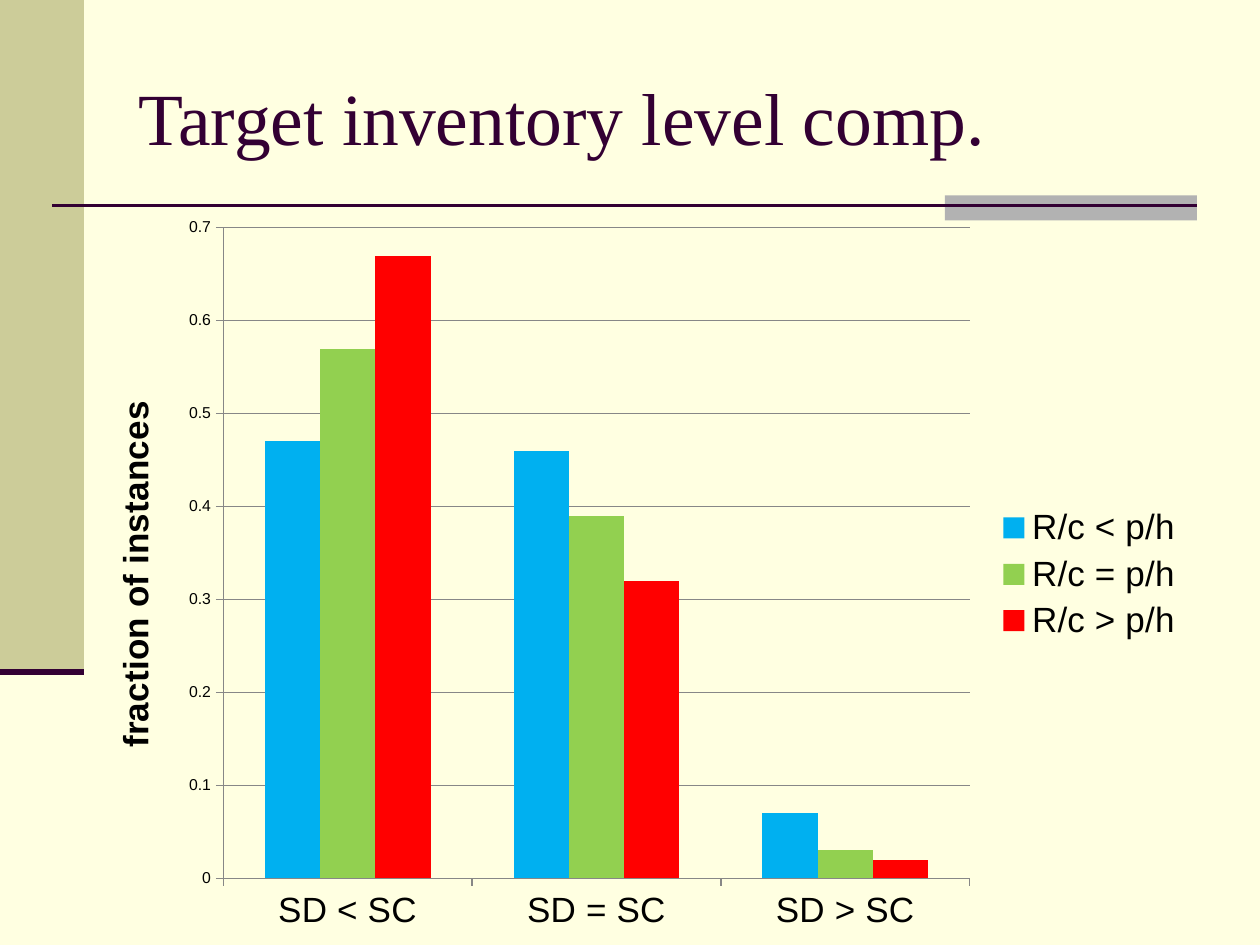
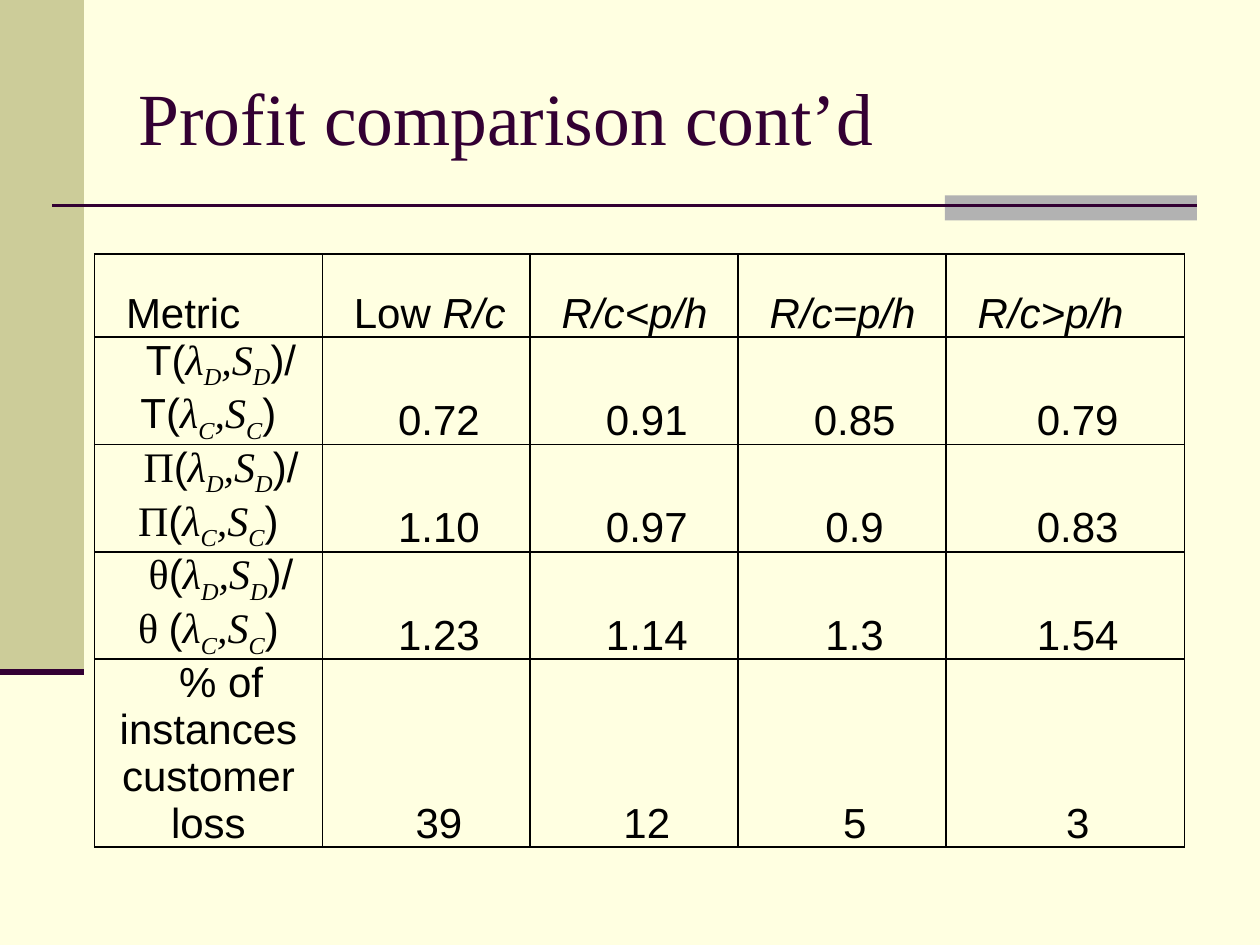
import pptx
import pptx.chart.data
import pptx.dml.color
import pptx.enum.chart
import pptx.enum.shapes
import pptx.enum.text
import pptx.oxml
import pptx.oxml.ns
import pptx.util
from lxml import etree

RGBColor = pptx.dml.color.RGBColor
CREAM = RGBColor(0xFF, 0xFF, 0xE1)
KHAKI = RGBColor(0xCC, 0xCC, 0x99)
SILVER = RGBColor(0xB2, 0xB2, 0xB2)
PLUM = RGBColor(0x33, 0x00, 0x33)
BLACK = RGBColor(0x00, 0x00, 0x00)
GRAY = RGBColor(0x87, 0x87, 0x87)
BLUE = RGBColor(0x00, 0xB0, 0xF0)
GREEN = RGBColor(0x92, 0xD0, 0x50)
RED = RGBColor(0xFF, 0x00, 0x00)

SANS = "Arial"
SERIF = "Times New Roman"
COLUMNS, ROWS = 120, 90
SUBSCRIPT = -25000


class Deck:
    def __init__(self):
        self.presentation = pptx.Presentation()
        self.presentation.slide_width = pptx.util.Inches(10)
        self.presentation.slide_height = pptx.util.Inches(7.5)
        self.set_fill(self.presentation.slide_master.background.fill, CREAM)
        self.slide = None

    def across(self, columns):
        return round(self.presentation.slide_width * columns / COLUMNS)

    def down(self, rows):
        return round(self.presentation.slide_height * rows / ROWS)

    def area(self, left, top, width, height):
        return self.across(left), self.down(top), self.across(width), self.down(height)

    def set_fill(self, fill, color):
        fill.solid()
        fill.fore_color.rgb = color

    def set_font(self, font, size, color=BLACK, name=SANS, bold=False, italic=False):
        font.size = pptx.util.Pt(size)
        font.color.rgb = color
        font.name = name
        font.bold = bold
        font.italic = italic

    def set_line(self, line, color, width):
        line.color.rgb = color
        line.width = pptx.util.Pt(width)

    def start_slide(self, title):
        layout = self.presentation.slide_layouts.get_by_name("Title Only")
        self.slide = self.presentation.slides.add_slide(layout)
        self.block(KHAKI, 0, 0, 8, 64)
        self.block(SILVER, 90, 18.6, 24, 2.4)
        self.rule(5, 114, 19.6, 1.5)
        self.rule(0, 8, 64, 3.5)
        self.title(title)

    def block(self, color, *place):
        shape = self.slide.shapes.add_shape(
            pptx.enum.shapes.MSO_SHAPE.RECTANGLE, *self.area(*place))
        shape.shadow.inherit = False
        self.set_fill(shape.fill, color)
        shape.line.fill.background()

    def rule(self, start, end, row, width):
        connector = self.slide.shapes.add_connector(
            pptx.enum.shapes.MSO_CONNECTOR.STRAIGHT,
            self.across(start), self.down(row), self.across(end), self.down(row))
        self.set_line(connector.line, PLUM, width)
        etree.SubElement(connector._element.spPr, pptx.oxml.ns.qn("a:effectLst"))

    def title(self, text):
        shape = self.slide.shapes.title
        shape.left, shape.top, shape.width, shape.height = self.area(12, 3.6, 102, 15)
        frame = shape.text_frame
        frame.word_wrap = True
        frame.auto_size = pptx.enum.text.MSO_AUTO_SIZE.NONE
        frame.vertical_anchor = pptx.enum.text.MSO_ANCHOR.MIDDLE
        paragraph = frame.paragraphs[0]
        paragraph.alignment = pptx.enum.text.PP_ALIGN.LEFT
        run = paragraph.add_run()
        run.text = text
        self.set_font(run.font, 42, PLUM, SERIF)

    def column_chart(self, place, categories, series, value_title):
        data = pptx.chart.data.CategoryChartData()
        data.categories = categories
        for name, values, color in series:
            data.add_series(name, values)
        chart = self.slide.shapes.add_chart(
            pptx.enum.chart.XL_CHART_TYPE.COLUMN_CLUSTERED, *self.area(*place), data).chart
        self.set_font(chart.font, 9)
        chart.has_title = False
        chart.has_legend = True
        chart.legend.position = pptx.enum.chart.XL_LEGEND_POSITION.RIGHT
        chart.legend.include_in_layout = False
        self.set_font(chart.legend.font, 20)
        plot = chart.plots[0]
        plot.vary_by_categories = False
        plot.gap_width = 150
        plot.overlap = 0
        for bars, (name, values, color) in zip(plot.series, series):
            bars.invert_if_negative = False
            self.set_fill(bars.format.fill, color)
        for axis in (chart.category_axis, chart.value_axis):
            axis.major_tick_mark = pptx.enum.chart.XL_TICK_MARK.OUTSIDE
            axis.minor_tick_mark = pptx.enum.chart.XL_TICK_MARK.NONE
            self.set_line(axis.format.line, GRAY, 0.75)
        self.set_font(chart.category_axis.tick_labels.font, 20)
        value_axis = chart.value_axis
        value_axis.minimum_scale, value_axis.maximum_scale = 0, 0.7
        value_axis.major_unit = 0.1
        value_axis.tick_labels.number_format = "General"
        value_axis.tick_labels.number_format_is_linked = False
        value_axis.has_major_gridlines = True
        self.set_line(value_axis.major_gridlines.format.line, GRAY, 0.75)
        run = value_axis.axis_title.text_frame.paragraphs[0].add_run()
        run.text = value_title
        self.set_font(run.font, 20, bold=True)

    def table(self, left, top, widths, heights, rows):
        place = self.area(left, top, sum(widths), sum(heights))
        table = self.slide.shapes.add_table(len(rows), len(widths), *place).table
        table.first_row = False
        table.horz_banding = False
        for column, width in zip(table.columns, widths):
            column.width = self.across(width)
        for row, height in zip(table.rows, heights):
            row.height = self.down(height)
        for row_index, row in enumerate(rows):
            for column_index, runs in enumerate(row):
                self.cell(table.cell(row_index, column_index), runs, row_index == 0)

    def cell(self, cell, runs, is_header):
        cell.fill.background()
        self.cell_borders(cell)
        cell.vertical_anchor = pptx.enum.text.MSO_ANCHOR.BOTTOM
        cell.margin_left = cell.margin_right = pptx.util.Inches(0.05 if is_header else 0.07)
        cell.margin_top = cell.margin_bottom = 0
        paragraph = cell.text_frame.paragraphs[0]
        if is_header:
            paragraph.line_spacing = 1.15
        else:
            paragraph.alignment = pptx.enum.text.PP_ALIGN.CENTER
        properties = paragraph._p.get_or_add_pPr()
        properties.set("marL", "0")
        properties.set("indent", str(pptx.util.Inches(0.2)))
        for text, name, italic, baseline in runs:
            if text == "\n":
                paragraph.add_line_break()
                continue
            run = paragraph.add_run()
            run.text = text
            self.set_font(run.font, 24, name=name, italic=italic)
            if baseline:
                run._r.get_or_add_rPr().set("baseline", str(baseline))

    def cell_borders(self, cell):
        properties = cell._tc.get_or_add_tcPr()
        for position, side in enumerate(("lnL", "lnR", "lnT", "lnB")):
            border = pptx.oxml.parse_xml(
                f'<a:{side} {pptx.oxml.ns.nsdecls("a")} w="{pptx.util.Pt(1)}">'
                f'<a:solidFill><a:srgbClr val="{BLACK}"/></a:solidFill></a:{side}>')
            properties.insert(position, border)


def plain(text):
    return (text, SANS, False, 0)


def slanted(text, name=SANS, baseline=0):
    return (text, name, True, baseline)


def arguments(policy):
    return [
        plain("("),
        slanted("λ", SERIF),
        slanted(policy, SERIF, SUBSCRIPT),
        slanted(",S", SERIF),
        slanted(policy, SERIF, SUBSCRIPT),
    ]


def ratio(symbol, name, gap=""):
    return [
        (symbol, name, False, 0), *arguments("D"), plain(")/"),
        plain("\n"),
        (symbol + gap, name, False, 0), *arguments("C"), plain(")"),
    ]


def main():
    deck = Deck()

    deck.start_slide("Target inventory level comp.")
    deck.column_chart(
        (8, 19.4, 106, 70.6),
        ["SD < SC", "SD = SC", "SD > SC"],
        [
            ("R/c < p/h", (0.47, 0.46, 0.07), BLUE),
            ("R/c = p/h", (0.57, 0.39, 0.03), GREEN),
            ("R/c > p/h", (0.67, 0.32, 0.02), RED),
        ],
        "fraction of instances")

    deck.start_slide("Profit comparison cont’d")
    header = [[plain("Metric")], [plain("Low "), slanted("R/c")]]
    header += [[slanted(f"R/c{sign}p/h")] for sign in "<=>"]
    metrics = [
        (ratio("T", SANS), ("0.72", "0.91", "0.85", "0.79")),
        (ratio("Π", SERIF), ("1.10", "0.97", "0.9", "0.83")),
        (ratio("θ", SERIF, " "), ("1.23", "1.14", "1.3", "1.54")),
        ([plain("% of instances customer loss")], ("39", "12", "5", "3")),
    ]
    body = [[label] + [[plain(value)] for value in values] for label, values in metrics]
    deck.table(9, 24.2, [21.7, 19.8, 19.8, 19.8, 22.7],
               [7.9, 10.2, 10.2, 10.2, 17.9], [header] + body)

    deck.presentation.save("out.pptx")


if __name__ == "__main__":
    main()
